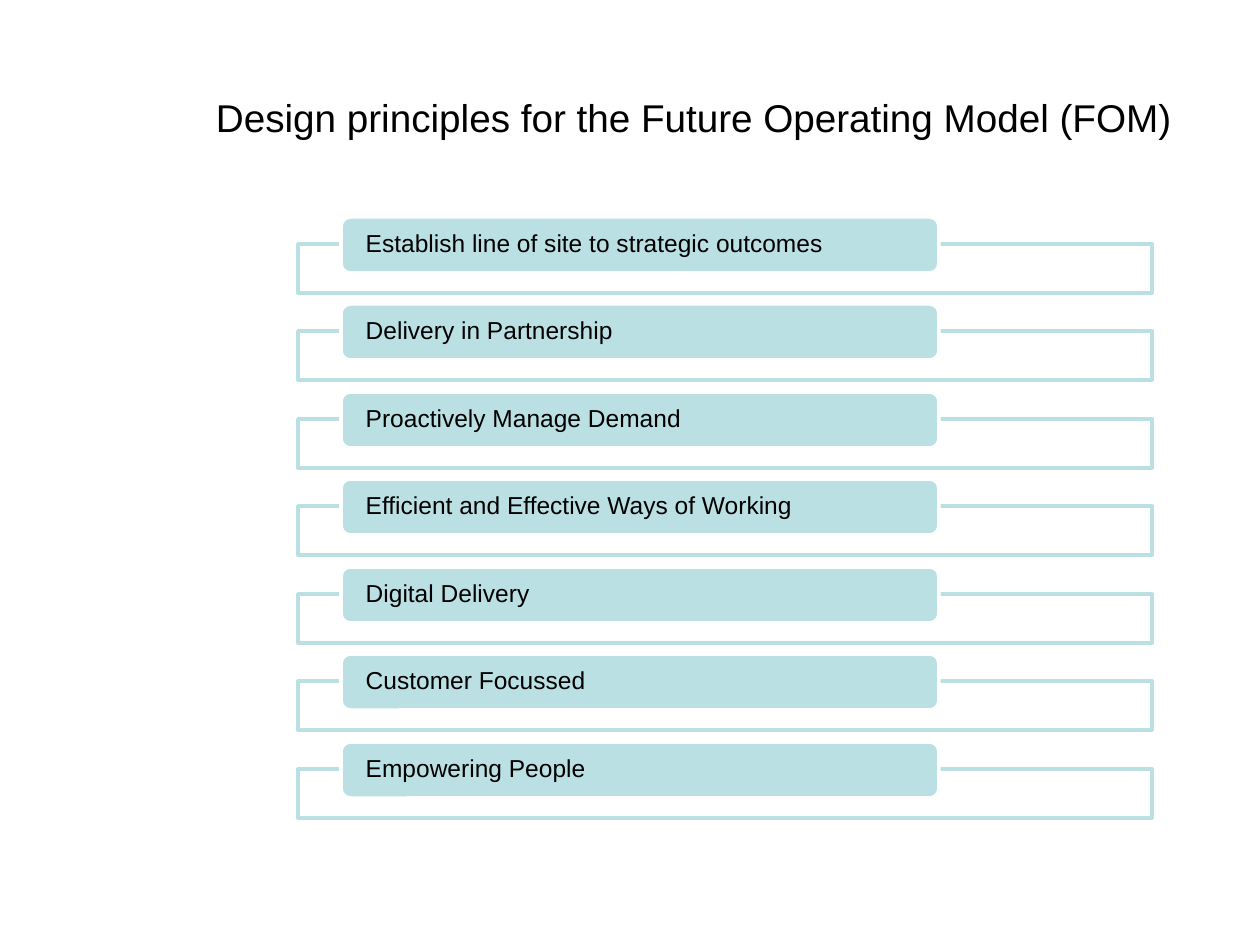
from dataclasses import dataclass

from pptx import Presentation
from pptx.dml.color import RGBColor
from pptx.enum.shapes import MSO_SHAPE
from pptx.enum.text import MSO_ANCHOR, PP_ALIGN
from pptx.util import Emu, Pt

RECTANGLE = MSO_SHAPE.RECTANGLE
ROUNDED = MSO_SHAPE.ROUNDED_RECTANGLE
MIDDLE = MSO_ANCHOR.MIDDLE
LEFT = PP_ALIGN.LEFT

PX_PER_INCH = 126
FONT = "Arial"
BLACK, WHITE, TEAL = "000000", "FFFFFF", "BBE0E3"

TITLE = "Design principles for the Future Operating Model (FOM)"
PRINCIPLES = [
    "Establish line of site to strategic outcomes",
    "Delivery in Partnership",
    "Proactively Manage Demand",
    "Efficient and Effective Ways of Working",
    "Digital Delivery",
    "Customer Focussed",
    "Empowering People",
]


@dataclass(frozen=True)
class Box:
    left: int
    top: int
    width: int
    height: int

    def lowered(self, distance: int) -> "Box":
        return Box(self.left, self.top + distance, self.width, self.height)

    def emu(self) -> list[Emu]:
        return [px(n) for n in (self.left, self.top, self.width, self.height)]


TITLE_BOX = Box(203, 38, 994, 157)
FIRST_FRAME = Box(298, 244, 854, 49)
FIRST_LABEL = Box(341, 217, 598, 56)
ROWS_SPAN = 525  # from the top of the first row to the top of the last


def px(length: int) -> Emu:
    return Emu(round(length * 914400 / PX_PER_INCH))


def color(hex_value: str) -> RGBColor:
    return RGBColor.from_string(hex_value)


def write(shape, text: str, size: float, side_inset: int, line_spacing: float) -> None:
    frame = shape.text_frame
    frame.word_wrap = True
    frame.vertical_anchor = MIDDLE
    frame.margin_left = frame.margin_right = px(side_inset)
    frame.margin_top = frame.margin_bottom = 0
    paragraph = frame.paragraphs[0]
    paragraph.text = text
    paragraph.alignment = LEFT
    paragraph.line_spacing = line_spacing
    paragraph.font.name = FONT
    paragraph.font.size = Pt(size)
    paragraph.font.color.rgb = color(BLACK)


def add_panel(slide, kind: MSO_SHAPE, box: Box, fill: str, line: str):
    panel = slide.shapes.add_shape(kind, *box.emu())
    panel.shadow.inherit = False
    panel.fill.solid()
    panel.fill.fore_color.rgb = color(fill)
    panel.line.color.rgb = color(line)
    panel.line.width = Pt(2)
    return panel


def add_principle(slide, principle: str, drop: int) -> None:
    add_panel(slide, RECTANGLE, FIRST_FRAME.lowered(drop), WHITE, TEAL)
    label = add_panel(slide, ROUNDED, FIRST_LABEL.lowered(drop), TEAL, WHITE)
    write(label, principle, size=14, side_inset=22, line_spacing=0.9)


def main() -> None:
    presentation = Presentation()
    presentation.slide_width = px(1260)
    presentation.slide_height = px(945)
    slide = presentation.slides.add_slide(presentation.slide_layouts[6])

    title = slide.shapes.add_textbox(*TITLE_BOX.emu())
    write(title, TITLE, size=22.1, side_inset=13, line_spacing=1.0)

    for row, principle in enumerate(PRINCIPLES):
        add_principle(slide, principle, ROWS_SPAN * row // (len(PRINCIPLES) - 1))

    presentation.save("out.pptx")


if __name__ == "__main__":
    main()
